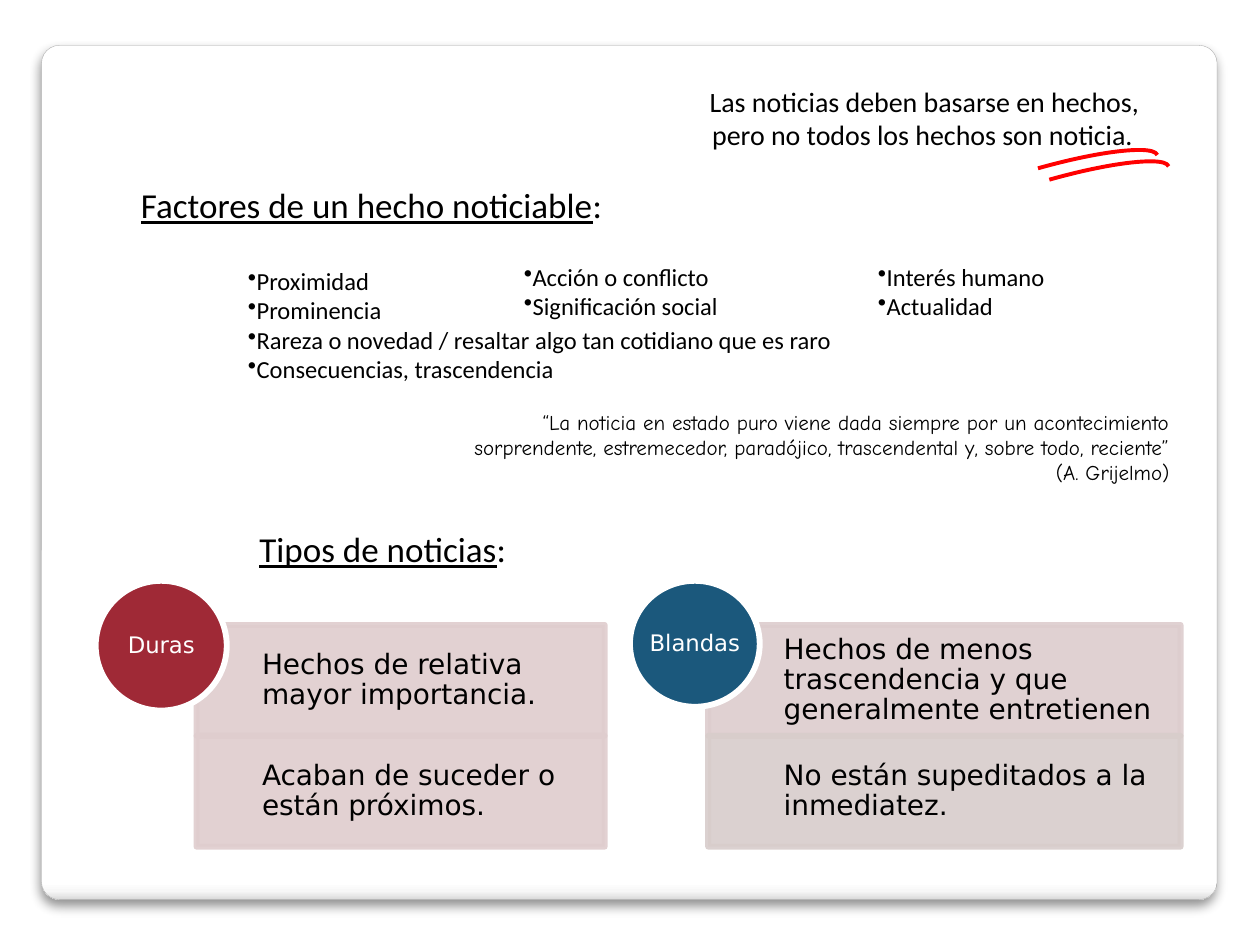
from dataclasses import dataclass

from pptx import Presentation
from pptx import util as u
from pptx.dml.color import RGBColor
from pptx.enum import shapes, text
from pptx.oxml import parse_xml
from pptx.oxml.ns import nsdecls, qn

CELL = u.Inches(0.1)  # the slide is a grid of 100 columns by 75 rows
COLS, ROWS = 100, 75


@dataclass(frozen=True)
class Theme:
    body: str = "Calibri"
    quote: str = "Comic Neue"
    diagram: str = "DejaVu Sans"
    ink: str = "000000"
    paper: str = "FFFFFF"
    accent: str = "FF0000"
    hard: str = "9F2936"
    soft: str = "1B587C"
    panels: tuple = ("DFCDCE", "DFCDCE", "DDCDCE", "D8CDCB")
    card_edge: str = "A4A4A4"
    card_stops: tuple = ((0, "FFFFFF"), (98, "FFFFFF"), (99, "F7F7F7"), (100, "DADADA"))
    heading: int = 20
    lead: int = 16
    item: int = 14
    label: int = 13
    small: int = 12
    border: float = 3.35


T = Theme()
ALIGN = text.PP_ALIGN
SHAPE = shapes.MSO_SHAPE


def grid(*cells):
    return [round(c * CELL) for c in cells]


def write(p, value, size=T.item, font=T.body, color=T.ink, underline=False):
    r = p.add_run()
    r.text = value
    r.font.size, r.font.name = u.Pt(size), font
    r.font.color.rgb = RGBColor.from_string(color)
    r.font.underline = underline


def add_text(slide, at, lines, wrap=True, align=ALIGN.LEFT, bullet=False, **style):
    """Add a text box with one paragraph per line; return its paragraphs."""
    tf = slide.shapes.add_textbox(*grid(*at)).text_frame
    tf.word_wrap = wrap
    tf.auto_size = text.MSO_AUTO_SIZE.SHAPE_TO_FIT_TEXT
    for i, line in enumerate(lines):
        p = tf.add_paragraph() if i else tf.paragraphs[0]
        p.alignment = align
        if bullet:
            p._p.get_or_add_pPr().append(
                parse_xml(f'<a:buChar {nsdecls("a")} char="•"/>'))
        write(p, line, **style)
    return tf.paragraphs


def add_heading(slide, at, title):
    p = add_text(slide, at, [title], wrap=False, size=T.heading, underline=True)[0]
    write(p, ":", size=T.heading)


def set_alpha(fill, percent):
    color = fill._xPr.find(qn("a:solidFill"))[0]
    color.append(parse_xml(f'<a:alpha {nsdecls("a")} val="{percent * 1000}"/>'))


def add_shape(slide, kind, at, line, width, fill=None, alpha=None):
    sp = slide.shapes.add_shape(kind, *grid(*at))
    sp.shadow.inherit = False
    sp.line.color.rgb = RGBColor.from_string(line)
    sp.line.width = u.Pt(width)
    if fill:
        sp.fill.solid()
        sp.fill.fore_color.rgb = RGBColor.from_string(fill)
    else:
        sp.fill.background()
    if alpha:
        set_alpha(sp.fill, alpha)
        set_alpha(sp.line.fill, alpha)
    return sp


def fill_shape(sp, value, insets, align=ALIGN.LEFT, **style):
    """Write vertically centred text inside a shape."""
    tf = sp.text_frame
    tf.word_wrap = True
    tf.vertical_anchor = text.MSO_ANCHOR.MIDDLE
    tf.margin_left, tf.margin_top, tf.margin_right, tf.margin_bottom = grid(*insets)
    p = tf.paragraphs[0]
    p.alignment, p.line_spacing = align, 0.9
    write(p, value, font=T.diagram, **style)


def add_card(slide):
    """Draw the rounded backdrop with its shaded lower edge and soft shadow."""
    sp = add_shape(slide, SHAPE.ROUNDED_RECTANGLE, (3.3, 3.6, 93.3, 67.8),
                   T.card_edge, 0.16)
    sp.adjustments[0] = 0.021
    stops = "".join(f'<a:gs pos="{pos * 1000}"><a:srgbClr val="{color}"/></a:gs>'
                    for pos, color in T.card_stops)
    pr = sp._element.spPr
    pr.replace(pr.find(qn("a:noFill")), parse_xml(
        f'<a:gradFill {nsdecls("a")}><a:gsLst>{stops}</a:gsLst>'
        '<a:lin ang="5400000" scaled="0"/></a:gradFill>'))
    pr.find(qn("a:effectLst")).append(parse_xml(
        f'<a:outerShdw {nsdecls("a")} blurRad="{u.Pt(6)}" dist="{u.Pt(4)}" '
        f'dir="5400000" rotWithShape="0"><a:srgbClr val="{T.ink}">'
        '<a:alpha val="44000"/></a:srgbClr></a:outerShdw>'))


def add_underline_strokes(slide):
    for shift in (0, 0.9):
        sp = add_shape(slide, SHAPE.ARC, (73.4 + shift, 13.3 + shift, 18.8, 3.1),
                       T.accent, 2.25)
        sp.rotation = 344.3


def add_news_type(slide, name, color, circle, left, width, indent, traits, fills):
    """Stack the traits of one kind of news and badge them with its name."""
    top, height = 49.6, 8.8
    for i, (trait, fill) in enumerate(zip(traits, fills)):
        sp = add_shape(slide, SHAPE.RECTANGLE, (left, top + i * height, width, height),
                       fill, T.border, fill, alpha=90)
        fill_shape(sp, trait, (indent, 1.2, 1.2, 1.2), size=T.lead)
    sp = add_shape(slide, SHAPE.OVAL, circle, T.paper, T.border, color)
    fill_shape(sp, name, (0, 0, 0, 0), ALIGN.CENTER, size=T.label, color=T.paper)


def main():
    prs = Presentation()
    prs.slide_width, prs.slide_height = grid(COLS, ROWS)
    slide = prs.slides.add_slide(prs.slide_layouts[6])

    add_card(slide)
    add_text(slide, (51.6, 6.2, 39.8, 6.4),
             ["Las noticias deben basarse en hechos, pero no todos los hechos son noticia. "],
             align=ALIGN.RIGHT, size=T.lead)
    add_underline_strokes(slide)

    add_heading(slide, (10.2, 14.1, 39, 4.4), "Factores de un hecho noticiable")
    factors = [
        ((18.7, 20.6, 13.3, 5.7), ["Proximidad", "Prominencia"]),
        ((40.6, 20.3, 18, 5.7), ["Acción o conflicto", "Significación social"]),
        ((68.7, 20.3, 16.4, 5.7), ["Interés humano", "Actualidad"]),
        ((18.7, 25.3, 50, 5.7),
         ["Rareza o novedad / resaltar algo tan cotidiano que es raro",
          "Consecuencias, trascendencia"]),
    ]
    for at, lines in factors:
        add_text(slide, at, lines, bullet=True)

    add_text(slide, (34.4, 32, 59.4, 7.1),
             ["“La noticia en estado puro viene dada siempre por un acontecimiento "
              "sorprendente, estremecedor, paradójico, trascendental y, sobre todo, "
              "reciente” (A. Grijelmo)"],
             align=ALIGN.RIGHT, size=T.small, font=T.quote)

    add_heading(slide, (19.6, 41.4, 21.8, 4.4), "Tipos de noticias")
    add_news_type(slide, "Duras", T.hard, (7.6, 46.1, 10.4, 10.3), 15.6, 32.4, 5.2,
                  ["Hechos de relativa mayor importancia.",
                   "Acaban de suceder o están próximos."], T.panels[:2])
    add_news_type(slide, "Blandas", T.soft, (50, 46.1, 10.3, 10), 56.2, 37.5, 6,
                  ["Hechos de menos trascendencia y que generalmente entretienen",
                   "No están supeditados a la inmediatez."], T.panels[2:])

    prs.save("out.pptx")


if __name__ == "__main__":
    main()
